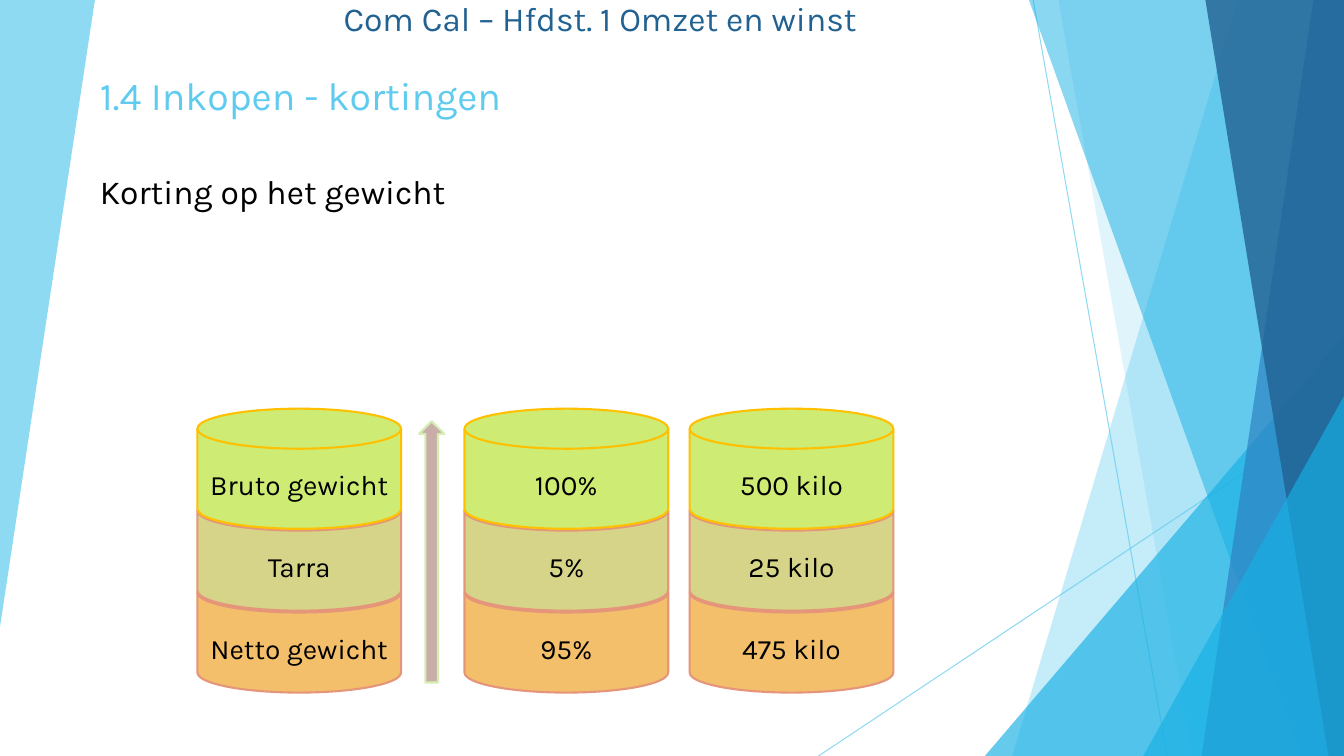
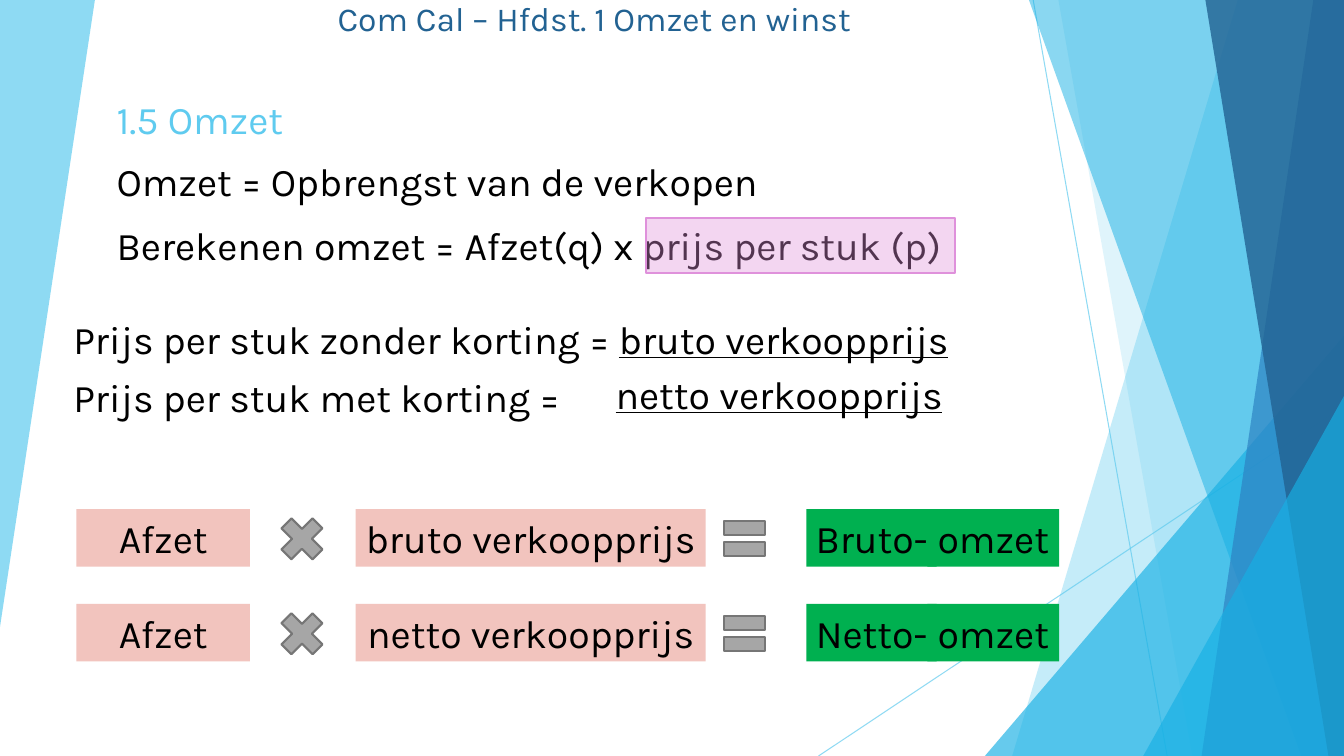
from lxml import etree
from pptx import Presentation
from pptx.dml.color import RGBColor
from pptx.enum.shapes import MSO_CONNECTOR, MSO_SHAPE
from pptx.enum.text import MSO_ANCHOR, PP_ALIGN
from pptx.oxml.ns import qn
from pptx.util import Emu, Pt

COLUMNS, ROWS = 32, 18
CELL = 381000
FONT = "Karla"

BLACK = RGBColor(0x00, 0x00, 0x00)
SKY = RGBColor(0x5F, 0xCB, 0xEF)
AZURE = RGBColor(0x17, 0xB0, 0xE4)
BLUE = RGBColor(0x2E, 0x83, 0xC3)
NAVY = RGBColor(0x22, 0x62, 0x92)
ORANGE = RGBColor(0xF3, 0xBF, 0x6B)
OLIVE = RGBColor(0xD6, 0xD4, 0x88)
LIME = RGBColor(0xCE, 0xEB, 0x73)
CORAL = RGBColor(0xE5, 0x95, 0x79)
GOLD = RGBColor(0xFF, 0xC0, 0x00)
MAUVE = RGBColor(0xC9, 0xAD, 0xA9)
PALE_GREEN = RGBColor(0xD5, 0xED, 0xB3)
PINK = RGBColor(0xDF, 0x91, 0xDB)
SALMON = RGBColor(0xEB, 0x9F, 0x95)
GREEN = RGBColor(0x00, 0xB0, 0x50)
GREY = RGBColor(0xA6, 0xA6, 0xA6)
DARK_GREY = RGBColor(0x76, 0x76, 0x76)

LEFT, CENTER = PP_ALIGN.LEFT, PP_ALIGN.CENTER
TOP, MIDDLE, BOTTOM = MSO_ANCHOR.TOP, MSO_ANCHOR.MIDDLE, MSO_ANCHOR.BOTTOM
STRAIGHT = MSO_CONNECTOR.STRAIGHT
RECTANGLE = MSO_SHAPE.RECTANGLE
TRIANGLE = MSO_SHAPE.ISOSCELES_TRIANGLE
DISK = MSO_SHAPE.FLOWCHART_MAGNETIC_DISK
UP_ARROW = MSO_SHAPE.UP_ARROW
TIMES = MSO_SHAPE.MATH_MULTIPLY
EQUALS = MSO_SHAPE.MATH_EQUAL

LINE_HEIGHT = 1.37
DISK_WIDTH, DISK_HEIGHT, DISK_STEP = 4.85, 2.86, 1.95


def grid(*lengths):
    return [Emu(round(length * CELL)) for length in lengths]


def set_alpha(shape, percent):
    colour = next(shape.element.spPr.iter(qn("a:srgbClr")))
    etree.SubElement(colour, qn("a:alpha")).set("val", str(percent * 1000))


class Lesson:
    def __init__(self):
        self.deck = Presentation()
        self.deck.slide_width, self.deck.slide_height = grid(COLUMNS, ROWS)
        self.shapes = None

    def new_slide(self, title_left):
        self.shapes = self.deck.slides.add_slide(self.deck.slide_layouts[6]).shapes
        self.backdrop()
        self.text(title_left, 0, "Com Cal – Hfdst. 1 Omzet en winst", 24, NAVY,
                  width=28.3, height=1.03, align=CENTER, anchor=BOTTOM)

    def backdrop(self):
        self.band([(0, 0), (2.26, 0), (0, 14.93)], SKY, 70)
        self.thin_line(24.6, 0, 27.79, ROWS)
        self.thin_line(COLUMNS, 9.67, 19.49, ROWS)
        self.right_band(29.47, 24.1, SKY, 36)
        self.right_band(25.2, 28.39, SKY, 20)
        self.corner(23.45, 7.99)
        self.right_band(24.5, 30.98, AZURE, 50)
        self.right_band(31.27, 28.61, BLUE, 70)
        self.right_band(28.7, 31.63, NAVY, 80)
        self.corner(27.22, 9.43)

    def paint(self, shape, fill, alpha=None, outline=None):
        shape.shadow.inherit = False
        shape.fill.solid()
        shape.fill.fore_color.rgb = fill
        if alpha:
            set_alpha(shape, alpha)
        if outline:
            shape.line.color.rgb = outline
            shape.line.width = Pt(1.5)
        else:
            shape.line.fill.background()

    def band(self, points, fill, alpha):
        start, *others = [grid(*point) for point in points]
        builder = self.shapes.build_freeform(*start)
        builder.add_line_segments(others)
        self.paint(builder.convert_to_shape(), fill, alpha)

    def right_band(self, top, bottom, fill, alpha):
        self.band([(top, 0), (COLUMNS, 0), (COLUMNS, ROWS), (bottom, ROWS)], fill, alpha)

    def corner(self, left, top):
        triangle = self.shape(TRIANGLE, left, top, COLUMNS - left, ROWS - top, AZURE, 66)
        triangle.adjustments[0] = 1

    def thin_line(self, *ends):
        line = self.shapes.add_connector(STRAIGHT, *grid(*ends))
        line.line.color.rgb = SKY
        line.line.width = Pt(0.75)
        set_alpha(line, 70)
        etree.SubElement(line.element.spPr, qn("a:effectLst"))

    def shape(self, kind, left, top, width, height, fill, alpha=None, outline=None):
        shape = self.shapes.add_shape(kind, *grid(left, top, width, height))
        self.paint(shape, fill, alpha, outline)
        return shape

    def fill_text(self, box, words, size, colour, align, anchor, underlined=""):
        frame = box.text_frame
        frame.vertical_anchor = anchor
        para = frame.paragraphs[0]
        para.text = words
        para.alignment = align
        if underlined:
            span = para.add_run()
            span.text = underlined
            span.font.underline = True
        for span in para.runs:
            span.font.name = FONT
            span.font.size = Pt(size)
            span.font.color.rgb = colour
        return frame

    def text(self, left, top, words, size=28, colour=BLACK, width=27,
             height=LINE_HEIGHT, align=LEFT, anchor=TOP, underlined=""):
        box = self.shapes.add_textbox(*grid(left, top, width, height))
        frame = self.fill_text(box, words, size, colour, align, anchor, underlined)
        frame.word_wrap = True

    def label(self, left, top, width, words, fill, alpha=None):
        box = self.shape(RECTANGLE, left, top, width, LINE_HEIGHT, fill, alpha)
        self.fill_text(box, words, 28, BLACK, CENTER, MIDDLE).word_wrap = False

    def stack(self, left, layers):
        styles = [(ORANGE, CORAL), (OLIVE, CORAL), (LIME, GOLD)]
        for level, (words, (fill, outline)) in enumerate(zip(layers, styles)):
            disk = self.shape(DISK, left, 13.63 - level * DISK_STEP,
                              DISK_WIDTH, DISK_HEIGHT, fill, outline=outline)
            frame = self.fill_text(disk, words, 20, BLACK, CENTER, MIDDLE)
            frame.word_wrap = False
            frame.margin_left = frame.margin_right = frame.margin_bottom = 0
            frame.margin_top = Pt(8)

    def formula(self, top, kind):
        self.label(1.82, top, 4.13, "Afzet", SALMON, 61)
        self.shape(TIMES, 6.48, top, 1.42, 1.42, GREY, outline=DARK_GREY)
        self.label(8.47, top, 8.33, f"{kind} verkoopprijs", SALMON, 61)
        self.shape(EQUALS, 17.06, top, 1.32, 1.42, GREY, outline=DARK_GREY)
        self.label(19.2, top, 3.1, f"{kind.capitalize()}-", GREEN)
        self.label(22.08, top, 3.14, "omzet", GREEN)


def discounts(lesson):
    lesson.new_slide(0.14)
    lesson.text(2.14, 1.58, "1.4 Inkopen - kortingen", colour=SKY)
    lesson.text(2.14, 3.94, "Korting op het gewicht", 24)
    lesson.stack(4.7, ["Netto gewicht", "Tarra", "Bruto gewicht"])
    lesson.shape(UP_ARROW, 9.98, 10.03, 0.6, 6.22, MAUVE, outline=PALE_GREEN)
    lesson.stack(11.06, ["95%", "5%", "100%"])
    lesson.stack(16.42, ["475 kilo", "25 kilo", "500 kilo"])


def turnover(lesson):
    lesson.new_slide(0)
    lines = [("1.5 Omzet", SKY),
             ("Omzet = Opbrengst van de verkopen", BLACK),
             ("Berekenen omzet = Afzet(q) x prijs per stuk (p)", BLACK)]
    for index, (words, colour) in enumerate(lines):
        lesson.text(2.54, 2.14 + 1.5 * index, words, colour=colour)
    lesson.shape(RECTANGLE, 15.38, 5.18, 7.37, 1.32, PINK, 37, PINK)
    lesson.text(1.51, 7.39, "Prijs per stuk zonder korting = ",
                underlined="bruto verkoopprijs")
    lesson.text(1.51, 8.78, "Prijs per stuk met korting =", width=12.8)
    lesson.text(14.42, 8.71, "", width=9, underlined="netto verkoopprijs")
    for top, kind in [(12.12, "bruto"), (14.38, "netto")]:
        lesson.formula(top, kind)


def main():
    lesson = Lesson()
    discounts(lesson)
    turnover(lesson)
    lesson.deck.save("out.pptx")


if __name__ == "__main__":
    main()
